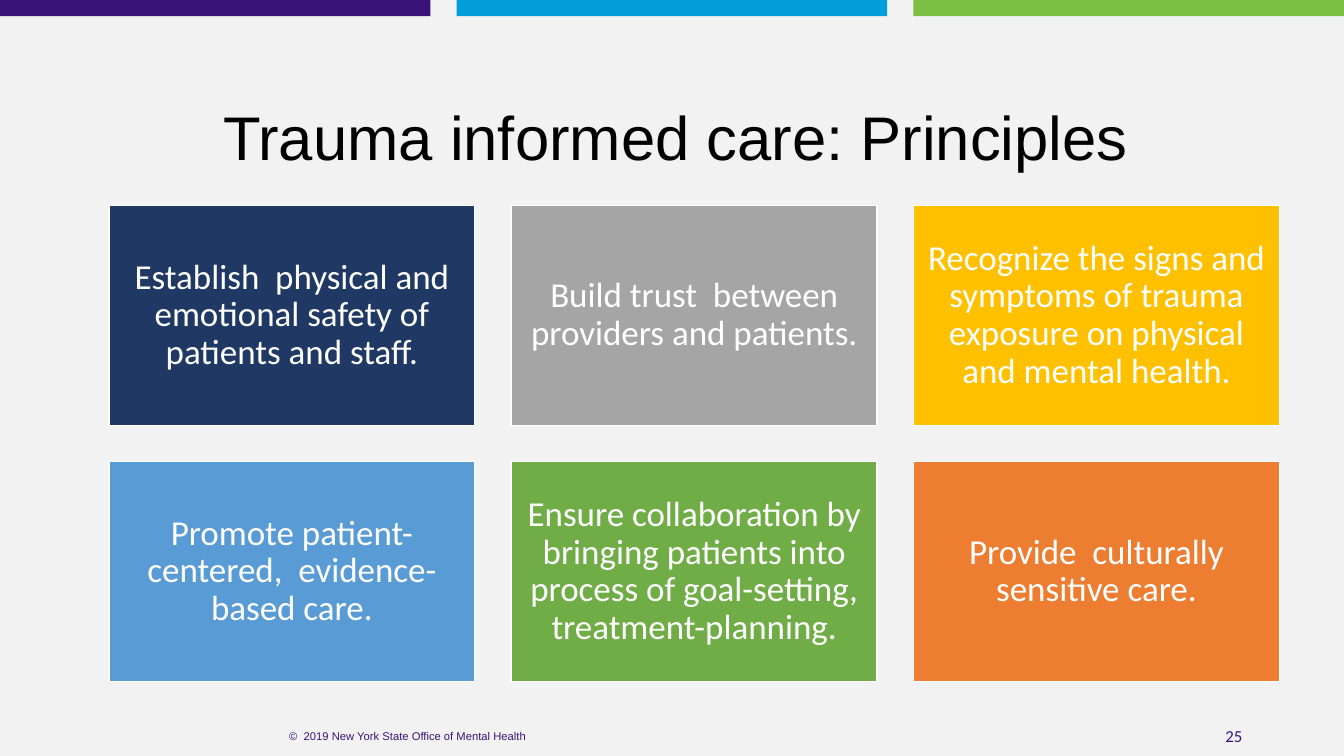
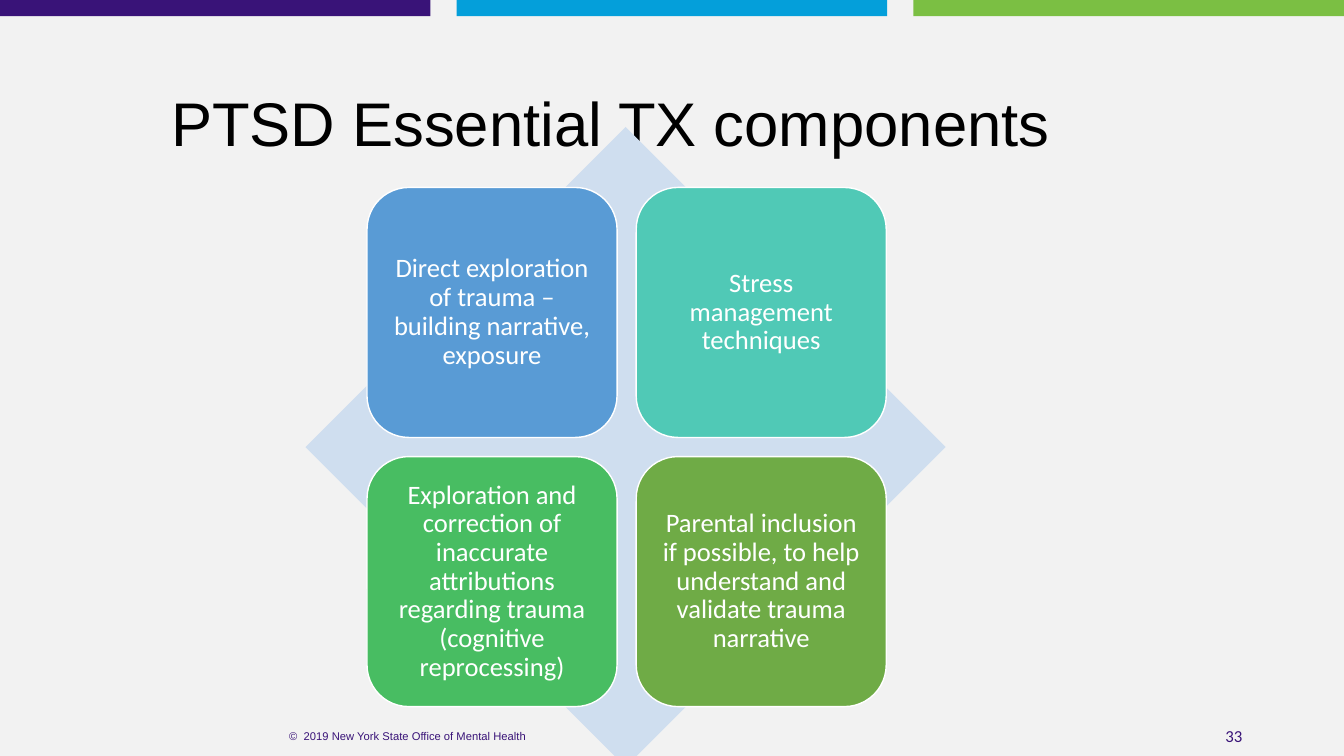
from pptx import Presentation
from pptx.dml.color import RGBColor
from pptx.enum.shapes import MSO_SHAPE as Shape
from pptx.enum.text import MSO_ANCHOR as Anchor, PP_ALIGN as Align
from pptx.util import Inches, Pt

PAPER = RGBColor(0xF2, 0xF2, 0xF2)
WHITE = RGBColor(0xFF, 0xFF, 0xFF)
BLACK = RGBColor(0x00, 0x00, 0x00)
PURPLE = RGBColor(0x39, 0x13, 0x78)
CYAN = RGBColor(0x04, 0x9F, 0xDA)
LIME = RGBColor(0x7B, 0xBF, 0x43)
NAVY = RGBColor(0x1F, 0x38, 0x64)
GRAY = RGBColor(0xA5, 0xA5, 0xA5)
GOLD = RGBColor(0xFF, 0xC0, 0x00)
BLUE = RGBColor(0x59, 0x9B, 0xD5)
GREEN = RGBColor(0x70, 0xAD, 0x47)
ORANGE = RGBColor(0xED, 0x7D, 0x31)
PALE_BLUE = RGBColor(0xCF, 0xDE, 0xEF)
TEAL = RGBColor(0x50, 0xC9, 0xB6)
EMERALD = RGBColor(0x48, 0xBD, 0x62)
OLIVE = RGBColor(0x6F, 0xAB, 0x46)

WIDTH, HEIGHT = 13.33, 7.5
HEADING_FONT, BODY_FONT = "Arial", "Calibri"
BANDS = (PURPLE, CYAN, LIME)
FOOTER = "©  2019 New York State Office of Mental Health"

PRINCIPLES = [
    ("Establish  physical and emotional safety of patients and staff.", NAVY),
    ("Build trust  between providers and patients.", GRAY),
    ("Recognize the signs and symptoms of trauma exposure on physical "
     "and mental health.", GOLD),
    ("Promote patient-centered,  evidence-based care.", BLUE),
    ("Ensure collaboration by bringing patients into process of "
     "goal-setting, treatment-planning.", GREEN),
    ("Provide  culturally sensitive care.", ORANGE),
]
COMPONENTS = [
    ("Direct exploration of trauma – building narrative, exposure", BLUE),
    ("Stress management techniques", TEAL),
    ("Exploration and correction of inaccurate attributions regarding "
     "trauma (cognitive reprocessing)", EMERALD),
    ("Parental inclusion if possible, to help understand and validate "
     "trauma narrative", OLIVE),
]


class Deck:
    def __init__(self):
        self.deck = Presentation()
        self.deck.slide_width = Inches(WIDTH)
        self.deck.slide_height = Inches(HEIGHT)
        fill = self.deck.slide_master.background.fill
        fill.solid()
        fill.fore_color.rgb = PAPER
        self.page = None

    def add_page(self, title, title_area, number):
        self.page = self.deck.slides.add_slide(self.deck.slide_layouts[6])
        for column, color in enumerate(BANDS):
            self.shape(Shape.RECTANGLE, (column * 4.53, 0, 4.27, 0.16), color)
        self.text(number, (9.42, 7.1, 3, 0.4), 12, BODY_FONT, PURPLE, Align.RIGHT)
        self.text(FOOTER, (1.81, 7.1, 4.47, 0.4), 8, HEADING_FONT, PURPLE)
        self.text(title, title_area, 44, HEADING_FONT, BLACK, spacing=0.9)

    def shape(self, kind, area, color, outlined=False):
        box = self.page.shapes.add_shape(kind, *map(Inches, area))
        box.shadow.inherit = False
        box.fill.solid()
        box.fill.fore_color.rgb = color
        if outlined:
            box.line.color.rgb = WHITE
            box.line.width = Pt(1)
        else:
            box.line.fill.background()
        return box

    def text(self, words, area, size, font, color, align=Align.CENTER, spacing=1.0):
        box = self.page.shapes.add_textbox(*map(Inches, area))
        self.set_text(box, words, size, font, color, align, spacing)

    def set_text(self, box, words, size, font, color, align=Align.CENTER, spacing=0.9):
        frame = box.text_frame
        frame.word_wrap = True
        frame.vertical_anchor = Anchor.MIDDLE
        para = frame.paragraphs[0]
        para.text = words
        para.alignment = align
        para.line_spacing = spacing
        para.font.name = font
        para.font.size = Pt(size)
        para.font.color.rgb = color

    def cards(self, items, kind, columns, origin, card, gap, size, inset):
        (left, top), (width, height) = origin, card
        for index, (words, color) in enumerate(items):
            row, column = divmod(index, columns)
            area = (left + column * (width + gap),
                    top + row * (height + gap), width, height)
            box = self.shape(kind, area, color, outlined=True)
            if kind == Shape.ROUNDED_RECTANGLE:
                box.adjustments[0] = 0.167
            frame = box.text_frame
            frame.margin_left = frame.margin_right = Inches(inset)
            frame.margin_top = frame.margin_bottom = Inches(inset)
            self.set_text(box, words, size, BODY_FONT, WHITE)


def main():
    show = Deck()

    show.add_page("Trauma informed care: Principles", (1.89, 0.74, 9.63, 1.3), "25")
    show.cards(PRINCIPLES, Shape.RECTANGLE, columns=3, origin=(1.08, 2.04),
               card=(3.63, 2.18), gap=0.36, size=25, inset=0.1)

    show.add_page("PTSD Essential TX components", (1.27, 0.61, 9.58, 1.3), "33")
    show.shape(Shape.DIAMOND, (3.03, 1.26, 6.35, 6.35), PALE_BLUE)
    show.cards(COMPONENTS, Shape.ROUNDED_RECTANGLE, columns=2, origin=(3.64, 1.86),
               card=(2.48, 2.48), gap=0.19, size=19, inset=0.08)

    show.deck.save("out.pptx")


if __name__ == "__main__":
    main()
